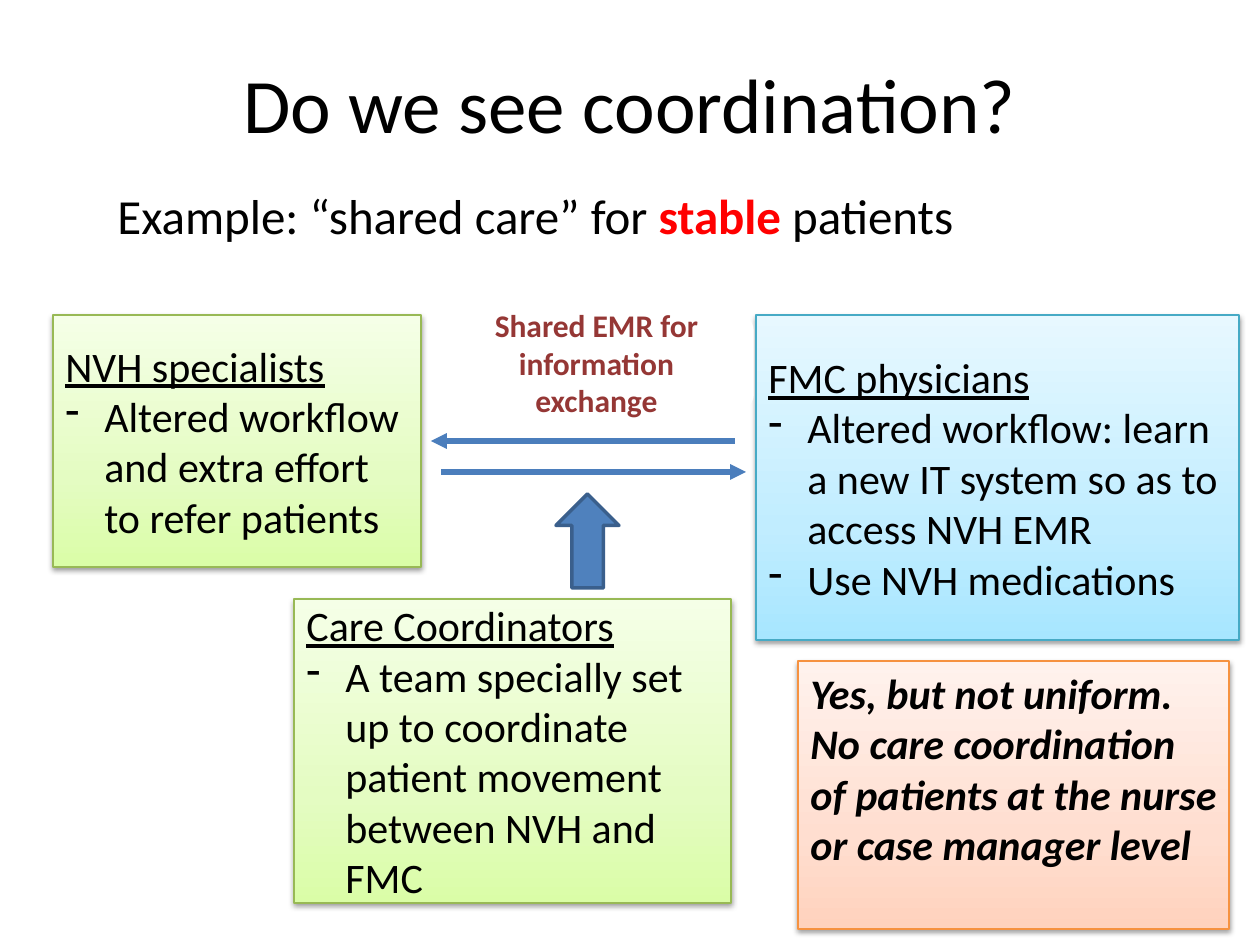
from copy import deepcopy
from lxml import etree
from pptx import Presentation
from pptx.dml.color import RGBColor
from pptx.enum.shapes import MSO_CONNECTOR as Connector, MSO_SHAPE as Shape
from pptx.enum.text import MSO_ANCHOR as Anchor, MSO_AUTO_SIZE as AutoSize, PP_ALIGN as Align
from pptx.oxml import parse_xml
from pptx.oxml.ns import nsdecls, qn
from pptx.util import Emu, Pt

BLACK = RGBColor(0, 0, 0)
WHITE = RGBColor(255, 255, 255)
RED = RGBColor(255, 0, 0)
MAROON = RGBColor(0x95, 0x37, 0x35)
BLUE = RGBColor(0x4F, 0x81, 0xBD)
NAVY = RGBColor(0x3A, 0x5F, 0x8C)
ARROW_BLUE = RGBColor(0x4B, 0x7E, 0xBC)
GREEN_EDGE = RGBColor(0x98, 0xB9, 0x55)
AQUA_EDGE = RGBColor(0x46, 0xAA, 0xC5)
ORANGE_EDGE = RGBColor(0xF6, 0x92, 0x40)
GREENS = (RGBColor(0xDA, 0xFD, 0xA7), RGBColor(0xE4, 0xFC, 0xC2), RGBColor(0xF5, 0xFF, 0xE7))
AQUAS = (RGBColor(0xA7, 0xE6, 0xFF), RGBColor(0xC1, 0xED, 0xFF), RGBColor(0xE7, 0xF8, 0xFF))
ORANGES = (RGBColor(0xFF, 0xD2, 0xBD), RGBColor(0xFF, 0xDE, 0xD0), RGBColor(0xFF, 0xF2, 0xED))

SCALE = 914400 / 126
STOPS = (0, 0.35, 1)
INDENT = 39

TITLE = "Do we see coordination?"
EXAMPLE = [
    ("Example: “shared care” for ", {}),
    ("stable", {"color": RED, "bold": True}),
    (" patients", {}),
]
TEAMS = [
    ((53, 315, 368, 252), GREENS, GREEN_EDGE, "NVH specialists",
     ["Altered workflow and extra effort to refer patients"]),
    ((756, 315, 483, 325), AQUAS, AQUA_EDGE, "FMC physicians",
     ["Altered workflow: learn a new IT system so as to access NVH EMR", "Use NVH medications"]),
    ((294, 599, 437, 304), GREENS, GREEN_EDGE, "Care Coordinators",
     ["A team specially set up to coordinate patient movement between NVH and FMC"]),
]
EXCHANGE = "Shared EMR for information exchange"
EXCHANGE_ARROWS = [((441, 472), (746, 472)), ((735, 441), (431, 441))]
VERDICT = ("Yes, but not uniform. No care coordination of patients "
           "at the nurse or case manager level")


def px(value):
    return Emu(round(value * SCALE))


def add_text(paragraph, text, size=24, color=BLACK, bold=False, italic=False,
             underline=False, align=Align.LEFT):
    paragraph.alignment = align
    run = paragraph.add_run()
    run.text = text
    font = run.font
    font.name, font.size, font.color.rgb = "Calibri", Pt(size), color
    font.bold, font.italic, font.underline = bold, italic, underline


def add_bullet(paragraph):
    properties = paragraph._p.get_or_add_pPr()
    properties.set("marL", str(px(INDENT)))
    properties.set("indent", str(px(-INDENT)))
    etree.SubElement(properties, qn("a:buFontTx"))
    etree.SubElement(properties, qn("a:buChar")).set("char", "-")


def prepare_frame(shape, anchor=Anchor.MIDDLE):
    frame = shape.text_frame
    frame.word_wrap = True
    frame.vertical_anchor = anchor
    return frame


def add_textbox(slide, box, anchor):
    return prepare_frame(slide.shapes.add_textbox(*map(px, box)), anchor)


def add_shape(slide, kind, box, fill, edge, width):
    shape = slide.shapes.add_shape(kind, *map(px, box))
    shape.shadow.inherit = False
    shape.fill.solid()
    shape.fill.fore_color.rgb = fill
    shape.line.color.rgb = edge
    shape.line.width = Pt(width)
    return shape


def add_panel(slide, box, colors, edge):
    shape = add_shape(slide, Shape.RECTANGLE, box, colors[0], edge, 0.75)
    shape.fill.gradient()
    shape.fill.gradient_angle = 90
    stop_list = shape._element.spPr.find(".//" + qn("a:gsLst"))
    stop_list.insert(1, deepcopy(stop_list[0]))
    for stop, position, color in zip(shape.fill.gradient_stops, STOPS, colors):
        stop.position = position
        stop.color.rgb = color
    shape._element.spPr.find(qn("a:effectLst")).append(parse_xml(
        f'<a:outerShdw {nsdecls("a")} blurRad="40000" dist="20000" dir="5400000" rotWithShape="0">'
        '<a:srgbClr val="000000"><a:alpha val="38000"/></a:srgbClr></a:outerShdw>'))
    return shape


def add_arrow(slide, start, end):
    arrow = slide.shapes.add_connector(Connector.STRAIGHT, *map(px, start + end))
    arrow.line.color.rgb = ARROW_BLUE
    arrow.line.width = Pt(3)
    etree.SubElement(arrow.line._get_or_add_ln(), qn("a:tailEnd")).set("type", "triangle")
    etree.SubElement(arrow._element.spPr, qn("a:effectLst"))


def main():
    presentation = Presentation()
    presentation.slide_width, presentation.slide_height = px(1260), px(945)
    slide = presentation.slides.add_slide(presentation.slide_layouts[6])

    title = add_textbox(slide, (63, 38, 1134, 130), Anchor.MIDDLE)
    add_text(title.paragraphs[0], TITLE, size=44, align=Align.CENTER)

    for box, colors, edge, heading, points in TEAMS:
        frame = prepare_frame(add_panel(slide, box, colors, edge))
        add_text(frame.paragraphs[0], heading, underline=True)
        for point in points:
            paragraph = frame.add_paragraph()
            add_text(paragraph, point)
            add_bullet(paragraph)

    for start, end in EXCHANGE_ARROWS:
        add_arrow(slide, start, end)

    support_arrow = add_shape(slide, Shape.DOWN_ARROW, (556, 494, 63, 94), BLUE, NAVY, 2)
    support_arrow.rotation = 180

    label = add_shape(slide, Shape.ROUNDED_RECTANGLE, (441, 315, 311, 95), WHITE, WHITE, 2)
    add_text(prepare_frame(label).paragraphs[0], EXCHANGE, size=18, color=MAROON,
             bold=True, align=Align.CENTER)

    verdict = add_panel(slide, (798, 661, 431, 268), ORANGES, ORANGE_EDGE)
    frame = prepare_frame(verdict, Anchor.TOP)
    frame.auto_size = AutoSize.SHAPE_TO_FIT_TEXT
    add_text(frame.paragraphs[0], VERDICT, bold=True, italic=True)

    example = add_textbox(slide, (105, 179, 1113, 72), Anchor.TOP)
    example.auto_size = AutoSize.SHAPE_TO_FIT_TEXT
    for text, style in EXAMPLE:
        add_text(example.paragraphs[0], text, size=28, **style)

    presentation.save("out.pptx")


if __name__ == "__main__":
    main()
